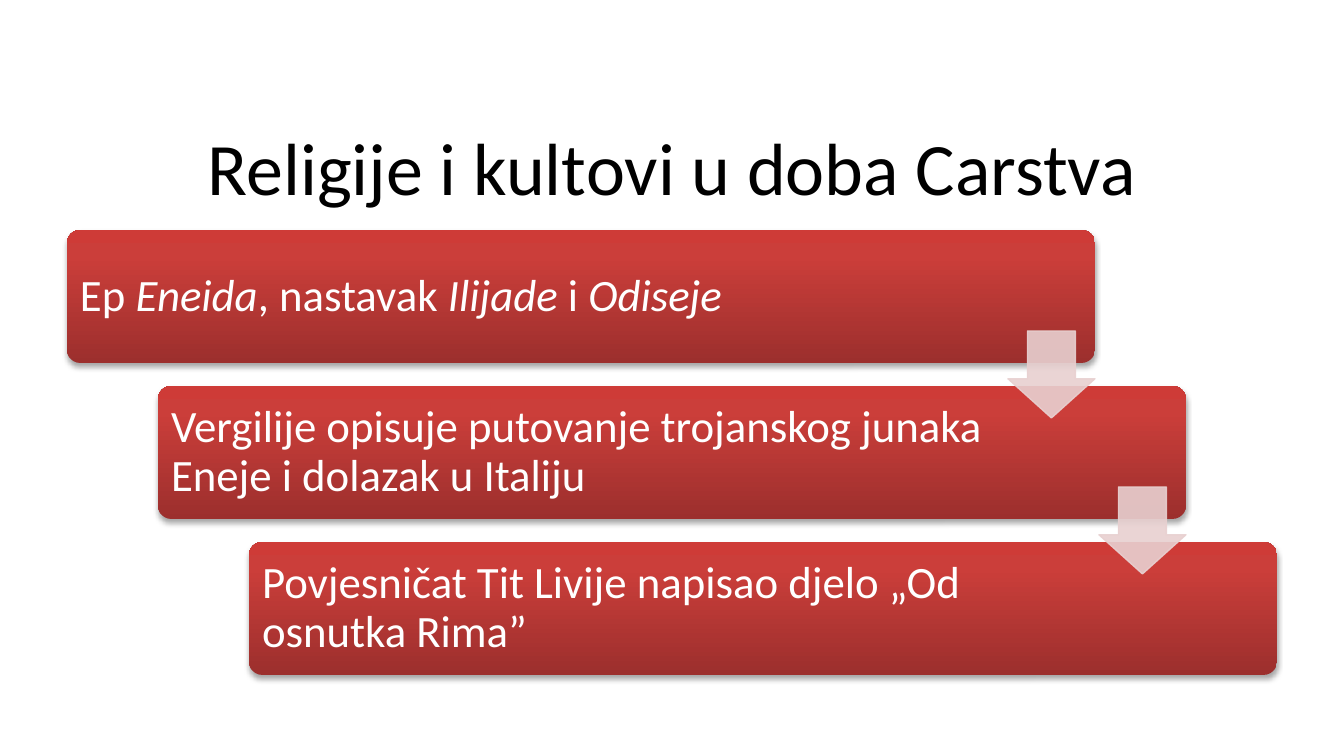
from copy import deepcopy
from lxml.etree import SubElement
from pptx import Presentation
from pptx.dml.color import RGBColor
from pptx.enum.shapes import MSO_SHAPE
from pptx.enum.text import MSO_ANCHOR, PP_ALIGN
from pptx.oxml.ns import qn
from pptx.util import Emu, Pt

TITLE = "Religije i kultovi u doba Carstva"
STEPS = [
    (892, [("Ep ", False), ("Eneida", True), (", nastavak ", False),
           ("Ilijade", True), (" i ", False), ("Odiseje", True)]),
    (851, [("Vergilije opisuje putovanje trojanskog junaka Eneje i dolazak u Italiju", False)]),
    (851, [("Povjesničat Tit Livije napisao djelo „Od osnutka Rima”", False)]),
]
GRADIENT = [(0, "9C2F2D"), (0.8, "CB3E3A"), (1, "CE3B37")]
ARROW_COLOR = "E8D0D0"
LEFT, TOP, WIDTH, HEIGHT = 67, 230, 1028, 133
SHIFT_X, SHIFT_Y = 91, 156
ARROW_LEFT, ARROW_TOP, ARROW_SIZE = 1008, 331, 87


def px(value):
    return Emu(round(value * 914400 / 134.4))


def color(value):
    return RGBColor.from_string(value)


def add_text(page, place, spans, size, ink, align=PP_ALIGN.LEFT, spacing=1.0):
    box = page.shapes.add_textbox(*map(px, place))
    frame = box.text_frame
    frame.word_wrap = True
    frame.vertical_anchor = MSO_ANCHOR.MIDDLE
    frame.margin_left = frame.margin_right = px(13)
    frame.margin_top = frame.margin_bottom = px(13)
    para = frame.paragraphs[0]
    para.alignment = align
    para.line_spacing = spacing
    for text, italic in spans:
        span = para.add_run()
        span.text = text
        span.font.name = "Calibri"
        span.font.size = Pt(size)
        span.font.italic = italic
        span.font.color.rgb = color(ink)


def add_shape(page, kind, place, adjustments):
    shape = page.shapes.add_shape(kind, *map(px, place))
    shape.shadow.inherit = False
    for index, value in enumerate(adjustments):
        shape.adjustments[index] = value
    return shape


def set_alpha(parent, percent):
    SubElement(parent, qn("a:alpha")).set("val", str(percent * 1000))


def add_bar(page, place):
    bar = add_shape(page, MSO_SHAPE.ROUNDED_RECTANGLE, place, [0.1])
    bar.line.fill.background()
    bar.fill.gradient()
    bar.fill.gradient_angle = 90
    properties = bar._element.spPr
    stops = properties.find(".//" + qn("a:gsLst"))
    stops.append(deepcopy(stops[0]))
    for stop, (position, shade) in zip(bar.fill.gradient_stops, GRADIENT):
        stop.position = position
        stop.color.rgb = color(shade)
    shadow = SubElement(properties.find(qn("a:effectLst")), qn("a:outerShdw"))
    for name, value in (("blurRad", Pt(3.1)), ("dist", Pt(1.8)), ("dir", 5400000), ("rotWithShape", 0)):
        shadow.set(name, str(int(value)))
    shade = SubElement(shadow, qn("a:srgbClr"))
    shade.set("val", "000000")
    set_alpha(shade, 35)


def add_arrow(page, place):
    arrow = add_shape(page, MSO_SHAPE.DOWN_ARROW, place, [0.55, 0.45])
    arrow.fill.solid()
    arrow.fill.fore_color.rgb = color(ARROW_COLOR)
    arrow.line.color.rgb = color(ARROW_COLOR)
    arrow.line.width = Pt(0.75)
    for shade in arrow._element.spPr.iter(qn("a:srgbClr")):
        set_alpha(shade, 90)


def main():
    deck = Presentation()
    deck.slide_width, deck.slide_height = px(1344), px(756)
    page = deck.slides.add_slide(deck.slide_layouts[6])
    add_text(page, (67, 113, 1210, 105), [(TITLE, False)], size=39.6, ink="000000",
             align=PP_ALIGN.CENTER)
    for index, (text_width, spans) in enumerate(STEPS):
        left, top = LEFT + index * SHIFT_X, TOP + index * SHIFT_Y
        add_bar(page, (left, top, WIDTH, HEIGHT))
        add_text(page, (left, top, text_width, HEIGHT), spans, size=24, ink="FFFFFF", spacing=0.9)
    for index in range(len(STEPS) - 1):
        add_arrow(page, (ARROW_LEFT + index * SHIFT_X, ARROW_TOP + index * SHIFT_Y,
                         ARROW_SIZE, ARROW_SIZE))
    deck.save("out.pptx")


if __name__ == "__main__":
    main()
